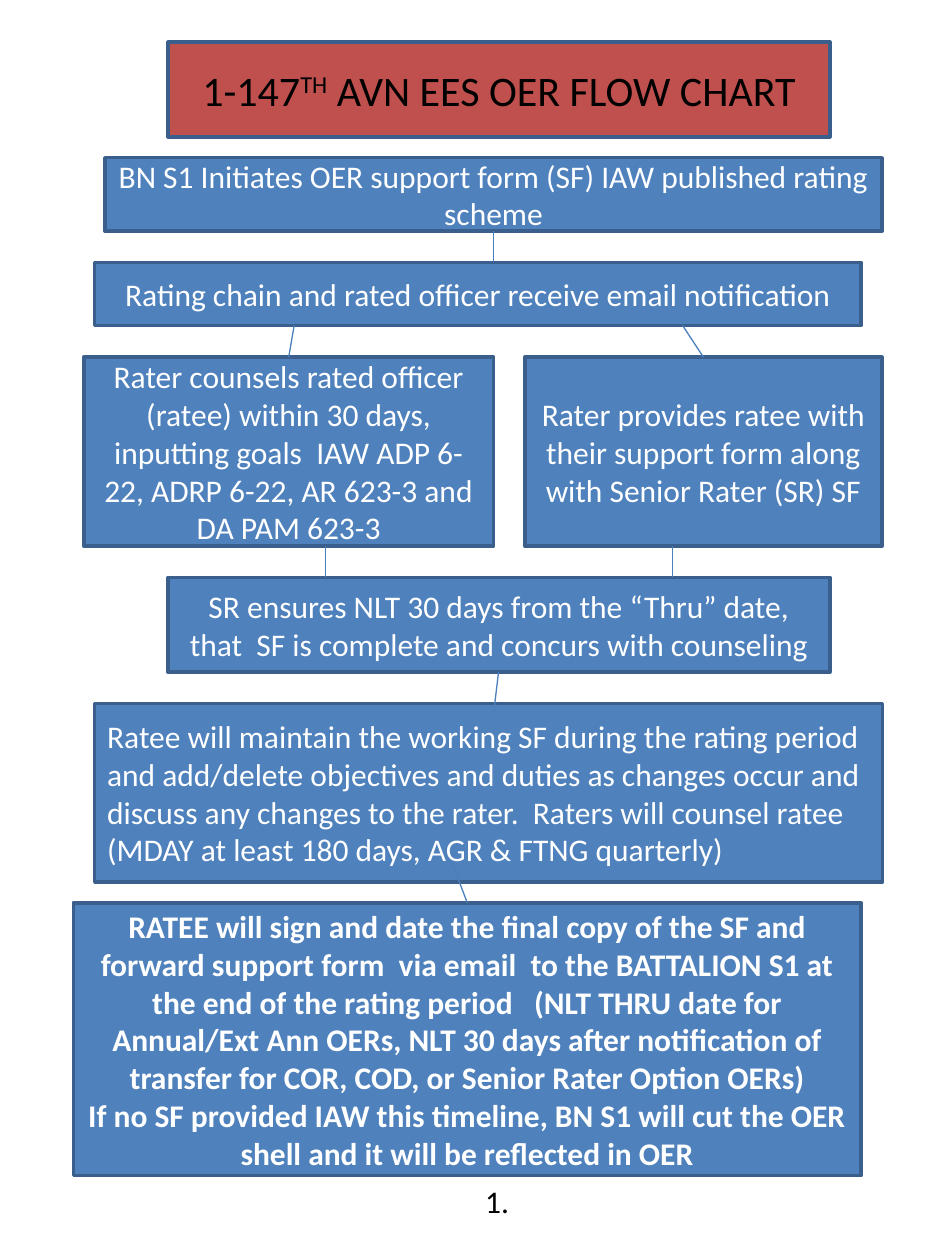
import pptx
import pptx.util
import pptx.oxml
import pptx.oxml.ns
import pptx.dml.color
import pptx.enum.shapes
import pptx.enum.text

Cm = pptx.util.Cm
Pt = pptx.util.Pt
RGBColor = pptx.dml.color.RGBColor
ALIGN = pptx.enum.text.PP_ALIGN
MIDDLE = pptx.enum.text.MSO_ANCHOR.MIDDLE

BLUE = RGBColor(0x4F, 0x81, 0xBD)
BORDER = RGBColor(0x3A, 0x5F, 0x8C)
LINK = RGBColor(0x4B, 0x7E, 0xBC)
RED = RGBColor(0xC0, 0x50, 0x4D)
WHITE = RGBColor(0xFF, 0xFF, 0xFF)
BLACK = RGBColor(0x00, 0x00, 0x00)


def write(p, text, size=18, color=WHITE, bold=False, align=ALIGN.CENTER):
    p.alignment = align
    r = p.add_run()
    r.text = text
    r.font.name = "Calibri"
    r.font.size = Pt(size)
    r.font.bold = bold
    r.font.color.rgb = color
    return r


def style_box(sp, fill):
    sp.fill.solid()
    sp.fill.fore_color.rgb = fill
    sp.line.color.rgb = BORDER
    sp.line.width = Pt(2)
    sp.shadow.inherit = False
    sp.text_frame.word_wrap = True
    sp.text_frame.auto_size = pptx.enum.text.MSO_AUTO_SIZE.NONE
    sp.text_frame.vertical_anchor = MIDDLE


prs = pptx.Presentation()
prs.slide_width = Cm(19.05)
prs.slide_height = Cm(25.4)
s = prs.slides.add_slide(prs.slide_layouts[5])

title = s.shapes.title
title.left, title.top, title.width, title.height = Cm(3.39), Cm(0.85), Cm(13.34), Cm(1.91)
title._element.spPr.append(pptx.oxml.parse_xml(
    f'<a:prstGeom {pptx.oxml.ns.nsdecls("a")} prst="roundRect"><a:avLst/></a:prstGeom>'))
style_box(title, RED)
p = title.text_frame.paragraphs[0]
write(p, "1-147", size=24, color=BLACK)
r = write(p, "TH", size=24, color=BLACK)
r.font._element.set("baseline", "30000")
write(p, " AVN EES OER FLOW CHART", size=24, color=BLACK)

steps = [
    (2.12, 3.18, 15.66, 1.48, {}, [
        "BN S1 Initiates OER support form (SF) IAW published rating scheme"]),
    (1.91, 5.29, 15.45, 1.27, {}, [
        "Rating chain and rated officer receive email notification"]),
    (1.69, 7.2, 8.26, 3.81, {}, [
        "Rater counsels rated officer (ratee) within 30 days, inputting goals  IAW "
        "ADP 6-22, ADRP 6-22, AR 623-3 and DA PAM 623-3"]),
    (10.58, 7.2, 7.2, 3.81, {}, [
        "Rater provides ratee with their support form along with Senior Rater (SR) SF"]),
    (3.39, 11.64, 13.34, 1.91, {}, [
        "SR ensures NLT 30 days from the “Thru” date, that  SF is complete and "
        "concurs with counseling"]),
    (1.91, 14.18, 15.88, 3.6, {"align": ALIGN.LEFT}, [
        "Ratee will maintain the working SF during the rating period and add/delete "
        "objectives and duties as changes occur and discuss any changes to the rater.  "
        "Raters will counsel ratee (MDAY at least 180 days, AGR & FTNG quarterly)"]),
    (1.48, 18.2, 15.88, 5.5, {"bold": True}, [
        "RATEE will sign and date the final copy of the SF and forward support form  "
        "via email  to the BATTALION S1 at the end of the rating period   (NLT THRU "
        "date for Annual/Ext Ann OERs, NLT 30 days after notification of transfer for "
        "COR, COD, or Senior Rater Option OERs)",
        "If no SF provided IAW this timeline, BN S1 will cut the OER shell and it will "
        "be reflected in OER"]),
]
for x, y, w, h, fmt, texts in steps:
    sp = s.shapes.add_shape(pptx.enum.shapes.MSO_SHAPE.FLOWCHART_PROCESS,
                            Cm(x), Cm(y), Cm(w), Cm(h))
    style_box(sp, BLUE)
    tf = sp.text_frame
    for i, text in enumerate(texts):
        write(tf.add_paragraph() if i else tf.paragraphs[0], text, **fmt)

links = [
    (9.95, 4.66, 9.95, 5.29),
    (13.76, 6.56, 14.18, 7.2),
    (5.93, 6.56, 5.82, 7.2),
    (6.56, 11.01, 6.56, 11.64),
    (13.55, 11.01, 13.55, 11.64),
    (10.05, 13.55, 9.95, 14.39),
    (9.1, 17.36, 9.42, 18.2),
]
for ends in links:
    cxn = s.shapes.add_connector(pptx.enum.shapes.MSO_CONNECTOR.STRAIGHT, *map(Cm, ends))
    cxn.line.color.rgb = LINK
    cxn.line.width = Pt(0.75)
    cxn._element.spPr.append(pptx.oxml.parse_xml(
        f'<a:effectLst {pptx.oxml.ns.nsdecls("a")}/>'))

number = s.shapes.add_textbox(Cm(9.53), Cm(23.71), Cm(1.07), Cm(1.02))
number.text_frame.word_wrap = True
write(number.text_frame.paragraphs[0], "1.", color=BLACK, align=ALIGN.LEFT)

prs.save("out.pptx")
